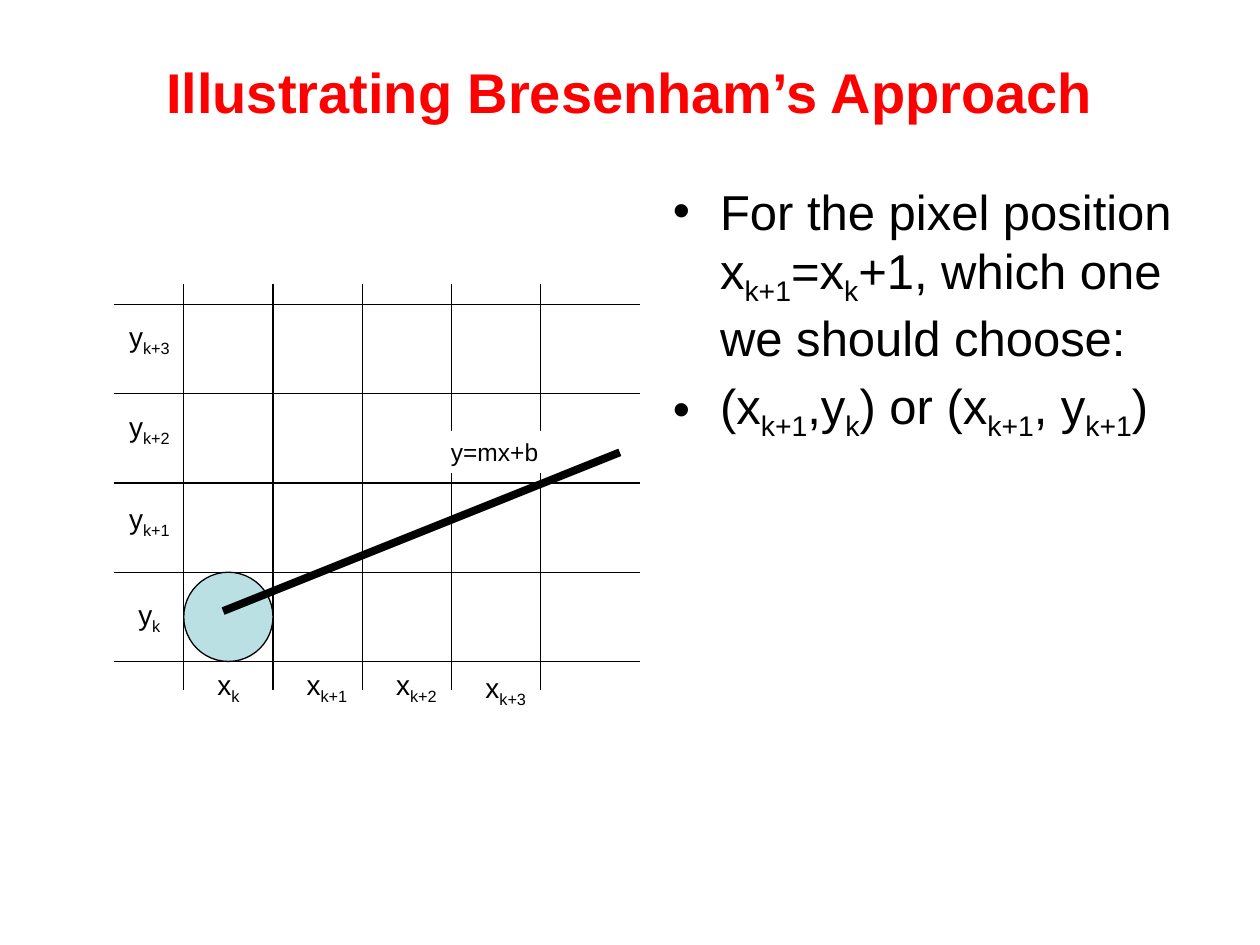
from pptx import Presentation
from pptx.dml.color import RGBColor
from pptx.enum.shapes import MSO_CONNECTOR, MSO_SHAPE
from pptx.enum.text import MSO_ANCHOR, PP_ALIGN
from pptx.oxml.ns import qn
from pptx.util import Pt
from lxml import etree

LINE = MSO_CONNECTOR.STRAIGHT
RECT, OVAL = MSO_SHAPE.RECTANGLE, MSO_SHAPE.OVAL
TOP, MIDDLE = MSO_ANCHOR.TOP, MSO_ANCHOR.MIDDLE
CENTER, RIGHT = PP_ALIGN.CENTER, PP_ALIGN.RIGHT

THEME = {
    "font": "Arial",
    "red": RGBColor(0xFF, 0x00, 0x00),
    "black": RGBColor(0x00, 0x00, 0x00),
    "white": RGBColor(0xFF, 0xFF, 0xFF),
    "pixel": RGBColor(0xBB, 0xE0, 0xE3),
    "title": Pt(32),
    "body": Pt(28),
    "label": Pt(16),
    "equation": Pt(14),
}


def add_runs(p, text, size, color=THEME["black"], bold=False):
    """Write text into p; every second part between bars is a subscript."""
    fmt = {"name": THEME["font"], "size": size, "bold": bold}
    for i, part in enumerate(text.split("|")):
        if not part:
            continue
        r = p.add_run()
        r.text = part
        for name, value in fmt.items():
            setattr(r.font, name, value)
        r.font.color.rgb = color
        if i % 2:
            r.font._element.set("baseline", "-25000")


def add_line(x1, y1, x2, y2, width=0.75):
    ln = s.shapes.add_connector(LINE, Pt(x1), Pt(y1), Pt(x2), Pt(y2))
    ln.line.color.rgb = THEME["black"]
    ln.line.width = Pt(width)
    etree.SubElement(ln._element.spPr, qn("a:effectLst"))


prs = Presentation()
prs.slide_width, prs.slide_height = Pt(720), Pt(540)
s = prs.slides.add_slide(prs.slide_layouts[1])

# Title and list
title, body = s.placeholders
for sp, box in ((title, (36, 21.6, 648, 61.2)), (body, (377.3, 100, 323.3, 382.3))):
    sp.left, sp.top, sp.width, sp.height = map(Pt, box)
title.text_frame.vertical_anchor = MIDDLE
p = title.text_frame.paragraphs[0]
p.alignment = CENTER
add_runs(p, "Illustrating Bresenham’s Approach", THEME["title"], THEME["red"], True)

bullets = [
    "For the pixel position x|k+1|=x|k|+1, which one we should choose:",
    "(x|k+1|,y|k|) or (x|k+1|, y|k+1|)",
]
tf = body.text_frame
for i, text in enumerate(bullets):
    p = tf.add_paragraph() if i else tf.paragraphs[0]
    add_runs(p, text, THEME["body"])

# Pixel grid
CELL, GRID_X, GRID_Y = 51, 105, 174
for i in range(5):
    y = GRID_Y + i * CELL
    add_line(65, y, 365.8, y)
for i in range(5):
    x = GRID_X + i * CELL
    add_line(x, 162, x, 394.5)

# Chosen pixel and the ideal line
sp = s.shapes.add_shape(OVAL, Pt(GRID_X), Pt(GRID_Y + 3 * CELL), Pt(CELL), Pt(CELL))
sp.shadow.inherit = False
sp.fill.solid()
sp.fill.fore_color.rgb = THEME["pixel"]
sp.line.color.rgb = THEME["black"]
sp.line.width = Pt(0.75)
add_line(127.5, 349.2, 354.2, 258.5, 4.5)

# Equation, masking the grid behind it
sp = s.shapes.add_shape(RECT, Pt(229.7), Pt(246.2), Pt(85), Pt(24))
sp.shadow.inherit = False
sp.fill.solid()
sp.fill.fore_color.rgb = THEME["white"]
sp.line.fill.background()
tf = sp.text_frame
tf.vertical_anchor = TOP
tf.paragraphs[0].alignment = RIGHT
add_runs(tf.paragraphs[0], "y=mx+b", THEME["equation"])

# Axis labels
subscripts = ["k", "k+1", "k+2", "k+3"]
y_spots = [(59.8, y) for y in (337.7, 283, 230.4, 179.3)]
x_spots = [(105, 378), (161.3, 378), (212.4, 378), (263.5, 379.5)]
for axis, spots in (("y", y_spots), ("x", x_spots)):
    for sub, (x, y) in zip(subscripts, spots):
        tf = s.shapes.add_textbox(Pt(x), Pt(y), Pt(CELL), Pt(26.6)).text_frame
        tf.word_wrap = True
        tf.paragraphs[0].alignment = CENTER
        add_runs(tf.paragraphs[0], f"{axis}|{sub}", THEME["label"])

prs.save("out.pptx")
